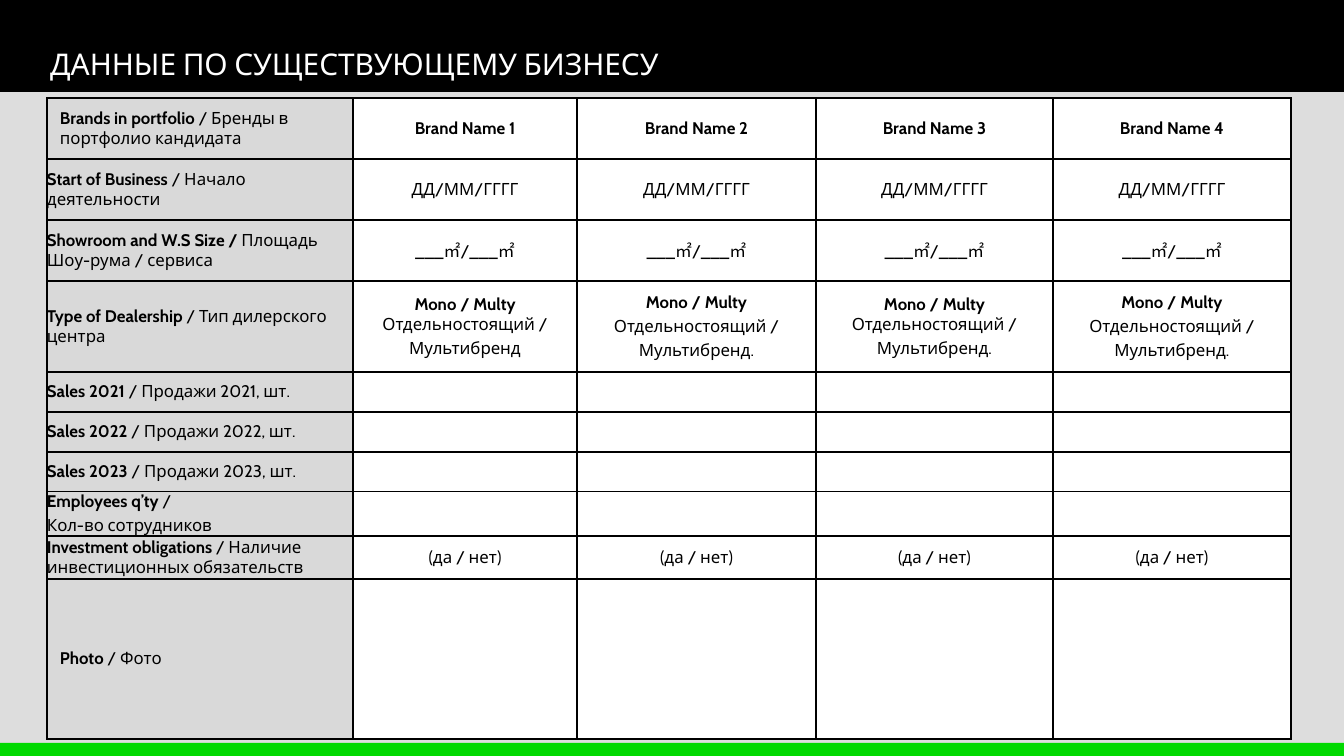
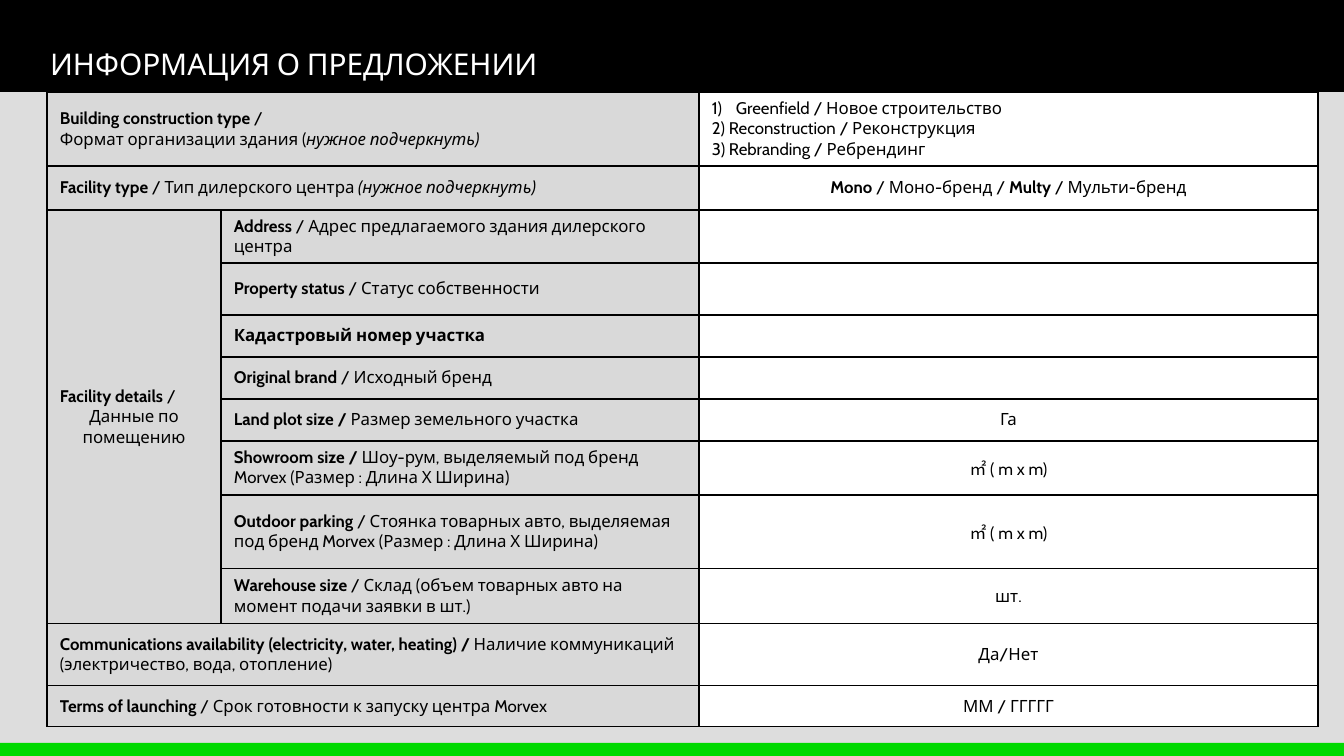
from dataclasses import dataclass
from lxml.etree import SubElement
from pptx import Presentation
from pptx.dml.color import RGBColor
from pptx.enum.shapes import MSO_SHAPE
from pptx.enum.text import MSO_ANCHOR, MSO_AUTO_SIZE, PP_ALIGN
from pptx.oxml.ns import qn
from pptx.util import Pt

SCALE = 9144000 / 1344
WIDE, HIGH = 1344, 756


@dataclass(frozen=True)
class Theme:
    """Colours, font and type sizes in one place."""
    black: str = "000000"
    white: str = "FFFFFF"
    back: str = "DDDDDD"
    label: str = "D9D9D9"
    green: str = "00D900"
    font: str = "Cabin"
    head: int = 16
    body: int = 9
    gap: int = 2
    rule: int = 1


THEME = Theme()
HEAD, FOOT = 92, 13
SIDE, HANG = 13, 24

DATE = "ДД/ММ/ГГГГ"
AREA = "___㎡/___㎡"
CHOICE = "(да / нет)"
SOLO, STAND, MULTI = "*Mono / Multy*", "Отдельностоящий /", "Мультибренд."
PLOT = "㎡ ( m x m)"
BLANK = [""] * 4

TRADE = [
    ["*Brands in portfolio* / Бренды в портфолио кандидата"]
    + [f"*Brand Name {n}*" for n in range(1, 5)],
    ["*Start of Business* / Начало деятельности"] + [DATE] * 4,
    ["*Showroom and W.S Size /* Площадь Шоу-рума / сервиса"] + [AREA] * 4,
    ["*Type of Dealership* / Тип дилерского центра",
     f"{SOLO} {STAND}|Мультибренд", f"{SOLO}|{STAND}|{MULTI}",
     f"{SOLO} {STAND}|{MULTI}", f"{SOLO}|{STAND}|{MULTI}"],
    *[[f"*Sales {year}* / Продажи {year}, шт."] + BLANK
      for year in (2021, 2022, 2023)],
    ["*Employees q’ty* /|Кол-во сотрудников"] + BLANK,
    ["*Investment obligations* / Наличие инвестиционных обязательств"]
    + [CHOICE] * 4,
    ["*Photo* / Фото"] + BLANK,
]

OFFER = [
    ["*Building construction type* /"
     "|Формат организации здания (~нужное подчеркнуть)~", None,
     "#Greenfield / Новое строительство"
     "|<2) Reconstruction / Реконструкция|<3) Rebranding / Ребрендинг"],
    ["*Facility type* / Тип дилерского центра ~(нужное подчеркнуть)~", None,
     "*Mono* / Моно-бренд / *Multy* / Мульти-бренд"],
    ["*Facility details* /|^Данные по помещению",
     "*Address* / Адрес предлагаемого здания дилерского центра", ""],
    [None, "*Property status* / Статус собственности", ""],
    [None, "*Кадастровый номер участка*", ""],
    [None, "*Original brand* / Исходный бренд", ""],
    [None, "*Land plot size /* Размер земельного участка", "Га"],
    [None, "*Showroom size /* Шоу-рум, выделяемый под бренд "
     "Morvex (Размер : Длина Х Ширина)", PLOT],
    [None, "*Outdoor parking* / Стоянка товарных авто, выделяемая "
     "под бренд Morvex (Размер : Длина Х Ширина)", PLOT],
    [None, "*Warehouse size* / Склад (объем товарных авто на "
     "момент подачи заявки в шт.)", "шт."],
    ["*Communications availability (electricity, water, heating) /* "
     "Наличие коммуникаций (электричество, вода, отопление)", None, "Да/Нет"],
    ["*Terms of launching* / Срок готовности к запуску центра Morvex", None,
     "ММ / ГГГГГ"],
]


def px(size):
    """Turn px into EMU."""
    return round(size * SCALE)


def apply(item, **form):
    """Set each attribute of an item from format values."""
    for name, value in form.items():
        setattr(item, name, value)


def paint(fill, tint):
    """Give a fill one solid colour."""
    fill.solid()
    fill.fore_color.rgb = RGBColor.from_string(tint)


def write(para, text, size, tint):
    """Add runs to a paragraph, * toggling bold and ~ toggling italic."""
    bold = slant = False
    chunk = ""
    for char in text + "\0":
        if char not in "*~\0":
            chunk += char
            continue
        if chunk:
            run = para.add_run()
            run.text = chunk
            apply(run.font, name=THEME.font, size=Pt(size), bold=bold,
                  italic=slant)
            run.font.color.rgb = RGBColor.from_string(tint)
        chunk = ""
        bold ^= char == "*"
        slant ^= char == "~"


def hang(para, count):
    """Give a paragraph a hanging indent, numbered if asked."""
    props = para._p.get_or_add_pPr()
    props.set("marL", str(px(HANG)))
    props.set("indent", str(-px(HANG)))
    if count:
        SubElement(props, qn("a:buAutoNum"), type="arabicParenR")


def fill_text(frame, text, align, gap):
    """Write paragraphs parted by | into a cell."""
    for index, line in enumerate(text.split("|")):
        para = frame.add_paragraph() if index else frame.paragraphs[0]
        mark = line[:1]
        para.alignment = {"^": PP_ALIGN.CENTER, "<": PP_ALIGN.LEFT,
                          "#": PP_ALIGN.LEFT}.get(mark, align)
        if mark in ("<", "#"):
            hang(para, mark == "#")
        if index and gap:
            para.space_before = Pt(gap)
        write(para, line.lstrip("^<#"), THEME.body, THEME.black)
        if not line:
            SubElement(para._p, qn("a:endParaRPr"), sz=str(THEME.body * 100))


def edge(cell):
    """Draw the four borders of a cell."""
    props = cell._tc.get_or_add_tcPr()
    for side in "LRTB":
        line = SubElement(props, qn(f"a:ln{side}"), w=str(Pt(THEME.rule)))
        solid = SubElement(line, qn("a:solidFill"))
        SubElement(solid, qn("a:srgbClr"), val=THEME.black)


def grid(slide, left, top, cols, rows, data, labels, spans=(), flush=(),
         gap=0):
    """Place a form table whose first columns hold labels."""
    table = slide.shapes.add_table(
        len(rows), len(cols), px(left), px(top), px(sum(cols)),
        px(sum(rows))).table
    apply(table, first_row=False, horz_banding=False)
    for col, width in zip(table.columns, cols):
        col.width = px(width)
    for row, height in zip(table.rows, rows):
        row.height = px(height)
    for y, line in enumerate(data):
        for x, text in enumerate(line):
            cell = table.cell(y, x)
            label = x < labels
            side = 0 if label and y in flush else px(SIDE)
            tall = 0 if y in flush or not text else px(5)
            apply(cell, margin_left=side, margin_right=side, margin_top=tall,
                  margin_bottom=tall, vertical_anchor=MSO_ANCHOR.MIDDLE)
            edge(cell)
            paint(cell.fill, THEME.label if label else THEME.white)
            align = PP_ALIGN.LEFT if label else PP_ALIGN.CENTER
            fill_text(cell.text_frame, text or "", align, gap)
    for y, x, end, last in spans:
        table.cell(y, x).merge(table.cell(end, last))


def band(slide, top, height, tint):
    """Draw one full-width band."""
    shape = slide.shapes.add_shape(MSO_SHAPE.RECTANGLE, 0, px(top), px(WIDE),
                                   px(height))
    shape.shadow.inherit = False
    paint(shape.fill, tint)
    shape.line.fill.background()


def frame(deck, title):
    """Add a slide with its bands and title."""
    slide = deck.slides.add_slide(deck.slide_layouts[6])
    band(slide, 0, HEAD, THEME.black)
    band(slide, HEAD, HIGH - HEAD, THEME.back)
    band(slide, HIGH - FOOT, FOOT, THEME.green)
    box = slide.shapes.add_textbox(px(37), px(3), px(757), px(75)).text_frame
    apply(box, word_wrap=True, auto_size=MSO_AUTO_SIZE.SHAPE_TO_FIT_TEXT)
    para = box.paragraphs[0]
    para.line_spacing = 2.0
    write(para, title, THEME.head, THEME.white)
    return slide


def trade(deck):
    """Build the slide on the existing business."""
    slide = frame(deck, "ДАННЫЕ ПО СУЩЕСТВУЮЩЕМУ БИЗНЕСУ")
    grid(slide, 47, 98, [306, 224, 239, 237, 238],
         [61, 61, 61, 91, 40, 40, 40, 43, 43, 160], TRADE, 1,
         flush=range(1, 9), gap=THEME.gap)


def offer(deck):
    """Build the slide on the proposal."""
    slide = frame(deck, "ИНФОРМАЦИЯ О ПРЕДЛОЖЕНИИ")
    wide = [(y, 0, y, 1) for y in (0, 1, 10, 11)]
    grid(slide, 47, HEAD, [174, 478, 619],
         [74, 44, 53, 52, 42, 42, 42, 54, 74, 55, 62, 41], OFFER, 2,
         spans=wide + [(2, 0, 9, 0)])


def main():
    """Build and save the deck."""
    deck = Presentation()
    apply(deck, slide_width=px(WIDE), slide_height=px(HIGH))
    trade(deck)
    offer(deck)
    deck.save("out.pptx")


if __name__ == "__main__":
    main()
